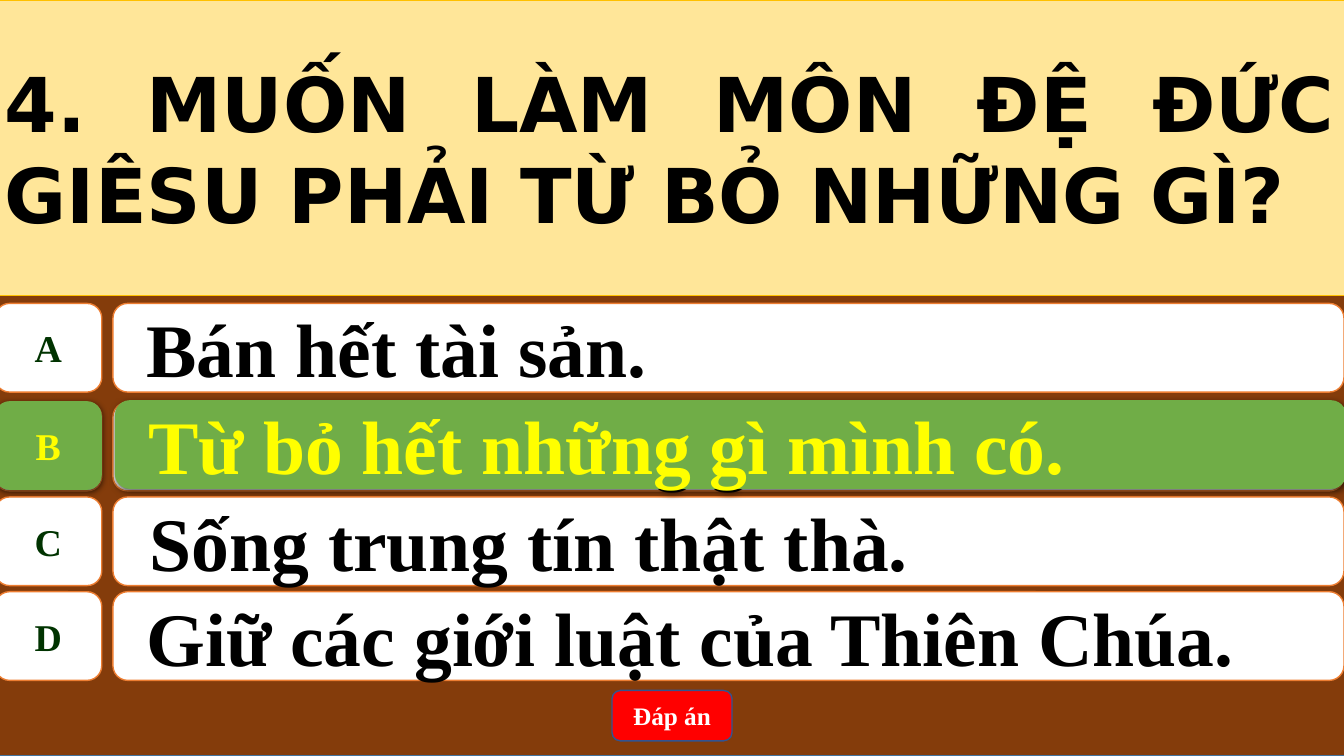
from lxml import etree
from pptx import Presentation
from pptx.dml.color import RGBColor
from pptx.enum.shapes import MSO_SHAPE
from pptx.enum.text import MSO_ANCHOR, PP_ALIGN
from pptx.oxml.ns import qn
from pptx.util import Pt

RECT = MSO_SHAPE.RECTANGLE
ROUND = MSO_SHAPE.ROUNDED_RECTANGLE
TAB = MSO_SHAPE.FLOWCHART_ALTERNATE_PROCESS
MIDDLE = MSO_ANCHOR.MIDDLE
LEFT, CENTER, JUSTIFY = PP_ALIGN.LEFT, PP_ALIGN.CENTER, PP_ALIGN.JUSTIFY

PX = 9144
THEME = {
    "brown": "843C0B", "brown_line": "43739E",
    "cream": "FFE699", "gold": "FFC000",
    "white": "FFFFFF", "orange": "ED7D31",
    "green": "70AD47", "yellow": "FFFF00", "dark_green": "003300",
    "red": "FF0000", "blue": "325491", "black": "000000",
    "serif": "Times New Roman", "sans": "DejaVu Sans",
    "big": 54, "letter": 27, "button": 18,
}


def box(shapes, kind, x, y, w, h, fill, line=None, weight=1, shadow=False):
    sp = shapes.add_shape(kind, x * PX, y * PX, w * PX, h * PX)
    sp.fill.solid()
    sp.fill.fore_color.rgb = RGBColor.from_string(THEME[fill])
    if line:
        sp.line.color.rgb = RGBColor.from_string(THEME[line])
        sp.line.width = Pt(weight)
    else:
        sp.line.fill.background()
    sp.shadow.inherit = False
    if shadow:
        effects = sp._element.spPr.find(qn("a:effectLst"))
        outer = etree.SubElement(effects, qn("a:outerShdw"), blurRad=str(Pt(4.5)),
                                 dist=str(Pt(1.5)), dir="5400000", rotWithShape="0")
        color = etree.SubElement(outer, qn("a:srgbClr"), val=THEME["black"])
        etree.SubElement(color, qn("a:alpha"), val="63000")
    return sp


def write(sp, text, size="big", color="black", font="serif", align=LEFT, indent=0, wrap=True):
    tf = sp.text_frame
    tf.word_wrap = wrap
    tf.vertical_anchor = MIDDLE
    tf.margin_left = (10 + indent) * PX
    p = tf.paragraphs[0]
    p.alignment = align
    r = p.add_run()
    r.text = text
    r.font.name = THEME[font]
    r.font.size = Pt(THEME[size])
    r.font.bold = True
    r.font.color.rgb = RGBColor.from_string(THEME[color])


prs = Presentation()
prs.slide_width, prs.slide_height = 1333 * PX, 750 * PX
s = prs.slides.add_slide(prs.slide_layouts[6])

box(s.shapes, RECT, -5, 0, 1339, 750, "brown", "brown_line")

title = box(s.shapes, RECT, -5, 0, 1339, 293, "cream", "gold", 0.5)
write(title, "4. MUỐN LÀM MÔN ĐỆ ĐỨC GIÊSU PHẢI TỪ BỎ NHỮNG GÌ?", font="sans", align=JUSTIFY)

button = box(s.shapes, ROUND, 607, 685, 119, 50, "red", "blue")
write(button, "Đáp án", size="button", color="white", align=CENTER)

plain = {"fill": "white", "line": "orange"}
correct = {"fill": "green", "shadow": True}
answers = [
    ("A", "Bán hết tài sản.", 112, 301, 301, 19, plain, "dark_green", "black"),
    ("B", "Từ bỏ hết những gì mình có.", 112, 399, 399, 22, plain, "dark_green", "black"),
    ("C", "Sống trung tín thật thà.", 112, 493, 493, 22, plain, "dark_green", "black"),
    ("D", "Giữ các giới luật của Thiên Chúa.", 112, 587, 587, 19, plain, "dark_green", "black"),
    ("B", "Từ bỏ hết những gì mình có.", 114, 397, 398, 19, correct, "yellow", "yellow"),
]
for letter, text, x, y, tab_y, indent, style, letter_color, text_color in answers:
    row = s.shapes.add_group_shape().shapes
    bar = box(row, ROUND, x, y, 1221, 88, **style)
    write(bar, text, color=text_color, indent=indent)
    tab = box(row, TAB, -5, tab_y, 106, 88, **style)
    write(tab, letter, size="letter", color=letter_color, align=CENTER, wrap=False)

prs.save("out.pptx")
